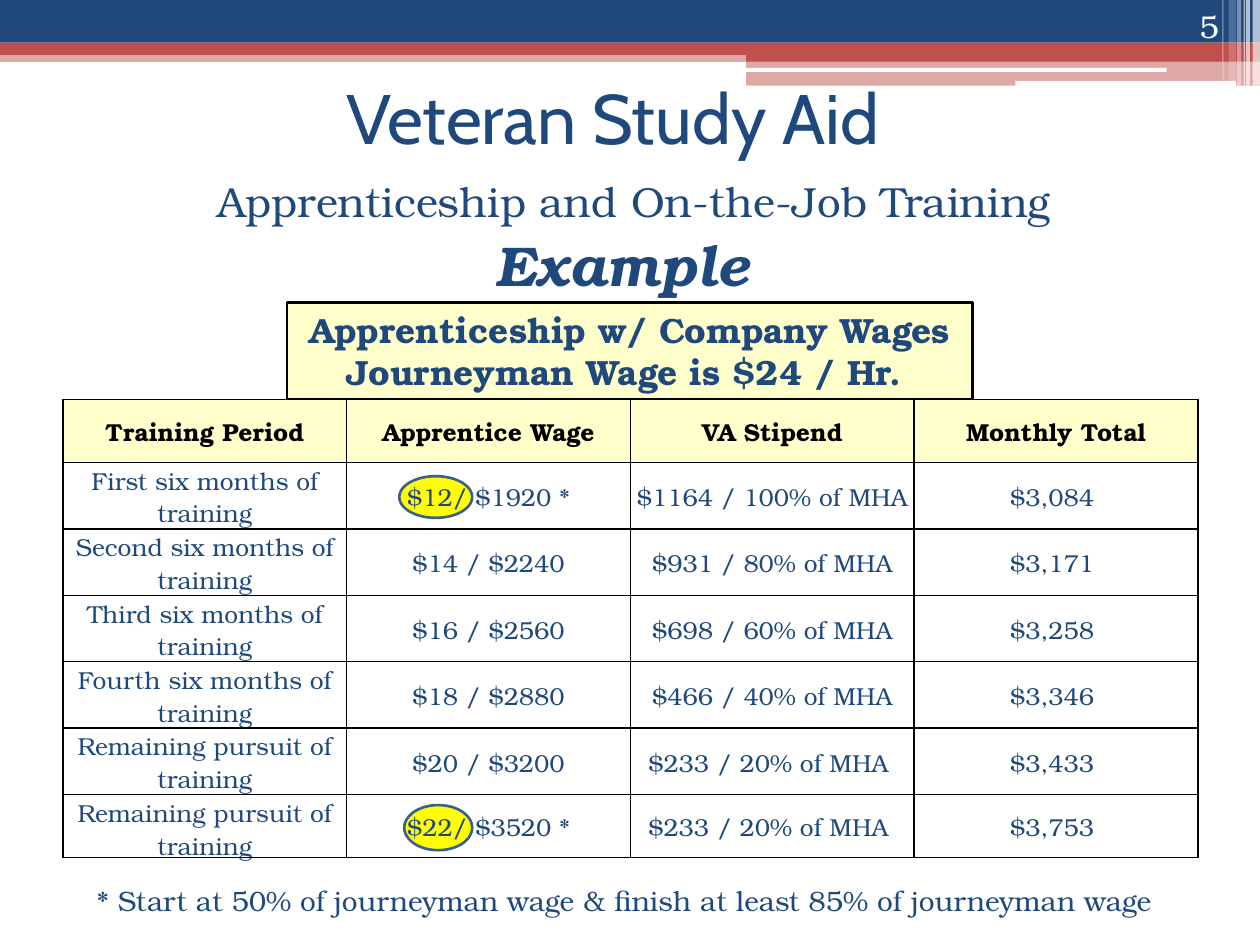
"""Build the apprenticeship wage slide."""
from dataclasses import dataclass

from lxml import etree
from pptx import Presentation
from pptx import util as u
from pptx.dml.color import RGBColor
from pptx.enum import shapes, text
from pptx.oxml.ns import qn

Kind = shapes.MSO_SHAPE
Align = text.PP_ALIGN
Anchor = text.MSO_ANCHOR


@dataclass(frozen=True)
class Theme:
    navy: str = "1F497D"
    red: str = "C0504D"
    white: str = "FFFFFF"
    black: str = "000000"
    cream: str = "FFFFCC"
    yellow: str = "FFFF00"
    edge: str = "3A5F8C"
    serif: str = "TeX Gyre Bonum"
    sans: str = "Cabin"
    title: int = 40
    example: int = 32
    sub: int = 24
    wage: int = 20
    page: int = 18
    note: int = 16
    cell: int = 14
    line: float = 1.5
    grid: int = 1


T = Theme()


@dataclass(frozen=True)
class Block:
    left: float
    top: float
    width: float
    height: float
    fill: str
    alpha: int = 100
    kind: Kind = Kind.RECTANGLE
    line: str = ""


@dataclass(frozen=True)
class Label:
    left: float
    top: float
    width: float
    height: float
    words: str
    size: int
    color: str = T.navy
    face: str = T.serif
    bold: bool = False
    slant: bool = False
    align: Align = Align.LEFT
    anchor: Anchor = Anchor.TOP
    wrap: bool = True


BANDS = [
    Block(0, 1.02, 25.4, 0.23, T.red, 50),
    Block(0, 0, 25.4, 0.86, T.navy),
    Block(0, 0.86, 25.4, 0.25, T.red),
    Block(15.04, 0.99, 10.36, 0.25, T.red),
    Block(15.04, 1.22, 10.36, 0.51, T.red, 50),
    Block(15.01, 1.37, 8.51, 0.08, T.white, kind=Kind.ROUNDED_RECTANGLE),
    Block(20.47, 1.63, 4.45, 0.1, T.white, kind=Kind.ROUNDED_RECTANGLE),
]
STRIPES = [
    Block(left, 0, width, height, T.white, alpha)
    for left, width, height, alpha in [
        (25.25, 0.15, 1.73, 65),
        (25.12, 0.08, 1.73, 65),
        (25.07, 0.03, 1.73, 60),
        (24.94, 0.08, 1.73, 40),
        (24.77, 0.15, 1.63, 20),
        (24.64, 0.03, 1.63, 30),
    ]
]
RINGS = [
    Block(*spot, T.yellow, kind=Kind.OVAL, line=T.edge)
    for spot in [(8.15, 16.23, 1.37, 0.91), (8.05, 9.6, 1.47, 0.84)]
]
PANEL = Block(5.79, 6.1, 13.82, 1.96, T.cream, line=T.black)
WAGE = Label(5.79, 6.1, 13.82, 1.96,
             "Apprenticeship w/ Company Wages Journeyman Wage is $24 / Hr. ",
             T.wage, bold=True, align=Align.CENTER)
SUB = Label(2.06, 3.53, 21.41, 1.7,
            "Apprenticeship and On-the-Job Training ", T.sub, align=Align.CENTER)
LABELS = [
    Label(22.71, 0, 2.11, 1.02, "5", T.page, T.white,
          align=Align.RIGHT, anchor=Anchor.BOTTOM),
    Label(9.73, 4.52, 5.92, 1.63, "Example", T.example, bold=True, slant=True),
    Label(6.73, 0.76, 11.91, 3.18, "Veteran Study Aid", T.title, face=T.sans,
          anchor=Anchor.MIDDLE),
    Label(1.7, 17.68, 22.05, 0.94,
          "* Start at 50% of journeyman wage & finish at least 85% of journeyman wage",
          T.note, wrap=False),
]
ROWS = [
    ("Training Period", "Apprentice Wage", "VA Stipend", "Monthly Total"),
    ("First six months of training", "$12/ $1920 *", "$1164 / 100% of MHA", "$3,084 "),
    ("Second six months of training", "$14 / $2240", "$931 / 80% of MHA", "$3,171 "),
    ("Third six months of training", "$16 / $2560", "$698 / 60% of MHA", "$3,258 "),
    ("Fourth six months of training", "$18 / $2880", "$466 / 40% of MHA", "$3,346 "),
    ("Remaining pursuit of training", "$20 / $3200", "$233 / 20% of MHA ", "$3,433 "),
    ("Remaining pursuit of training", "$22/ $3520 *", "$233 / 20% of MHA ", "$3,753 "),
]
HEIGHTS = [1.27] + [1.34] * 5 + [1.27]
COL = 5.72


def rgb(code: str) -> RGBColor:
    return RGBColor.from_string(code)


def draw(slide, block: Block):
    shape = slide.shapes.add_shape(
        block.kind, u.Cm(block.left), u.Cm(block.top),
        u.Cm(block.width), u.Cm(block.height))
    shape.shadow.inherit = False
    shape.fill.solid()
    shape.fill.fore_color.rgb = rgb(block.fill)
    if block.alpha < 100:
        tint = shape.fill._xPr.find(qn("a:solidFill"))[0]
        etree.SubElement(tint, qn("a:alpha"), val=str(block.alpha * 1000))
    if block.line:
        shape.line.color.rgb = rgb(block.line)
        shape.line.width = u.Pt(T.line)
    else:
        shape.line.fill.background()
    return shape


def style(para, size: int, color: str, face: str, bold: bool, slant: bool = False) -> None:
    font = para.font
    font.size, font.name = u.Pt(size), face
    font.bold, font.italic = bold, slant
    font.color.rgb = rgb(color)


def write(shape, label: Label):
    frame = shape.text_frame
    frame.word_wrap = label.wrap
    frame.vertical_anchor = label.anchor
    para = frame.paragraphs[0]
    para.text = label.words
    para.alignment = label.align
    style(para, label.size, label.color, label.face, label.bold, label.slant)
    return para


def place(slide, label: Label):
    box = slide.shapes.add_textbox(
        u.Cm(label.left), u.Cm(label.top), u.Cm(label.width), u.Cm(label.height))
    return write(box, label)


def border(cell) -> None:
    props = cell._tc.get_or_add_tcPr()
    for side in "LRTB":
        line = etree.SubElement(props, qn(f"a:ln{side}"), w=str(u.Pt(T.grid)))
        solid = etree.SubElement(line, qn("a:solidFill"))
        etree.SubElement(solid, qn("a:srgbClr"), val=T.black)


def fill_cell(cell, words: str, head: bool) -> None:
    cell.margin_left = cell.margin_right = cell.margin_top = u.Cm(0.03)
    cell.margin_bottom = 0
    cell.vertical_anchor = Anchor.MIDDLE
    border(cell)
    if head:
        cell.fill.solid()
        cell.fill.fore_color.rgb = rgb(T.cream)
    else:
        cell.fill.background()
    para = cell.text_frame.paragraphs[0]
    para.text = words
    para.alignment = Align.CENTER
    style(para, T.cell, T.black if head else T.navy, T.serif, head)


def grid(slide) -> None:
    table = slide.shapes.add_table(
        len(ROWS), len(ROWS[0]), u.Cm(1.27), u.Cm(8.05),
        u.Cm(COL * len(ROWS[0])), u.Cm(sum(HEIGHTS))).table
    table.horz_banding = False
    for col in table.columns:
        col.width = u.Cm(COL)
    for r, (row, height) in enumerate(zip(ROWS, HEIGHTS)):
        table.rows[r].height = u.Cm(height)
        for c, words in enumerate(row):
            fill_cell(table.cell(r, c), words, r == 0)


def main() -> None:
    deck = Presentation()
    deck.slide_width, deck.slide_height = u.Cm(25.4), u.Cm(19.05)
    slide = deck.slides.add_slide(deck.slide_layouts[6])
    for block in BANDS + STRIPES + RINGS:
        draw(slide, block)
    sub = place(slide, SUB)
    sub.line_spacing, sub.space_before = 0.9, u.Pt(3)
    sub._p.get_or_add_pPr().set("marL", str(u.Cm(0.3)))
    write(draw(slide, PANEL), WAGE)
    grid(slide)
    for label in LABELS:
        place(slide, label)
    deck.save("out.pptx")


if __name__ == "__main__":
    main()
